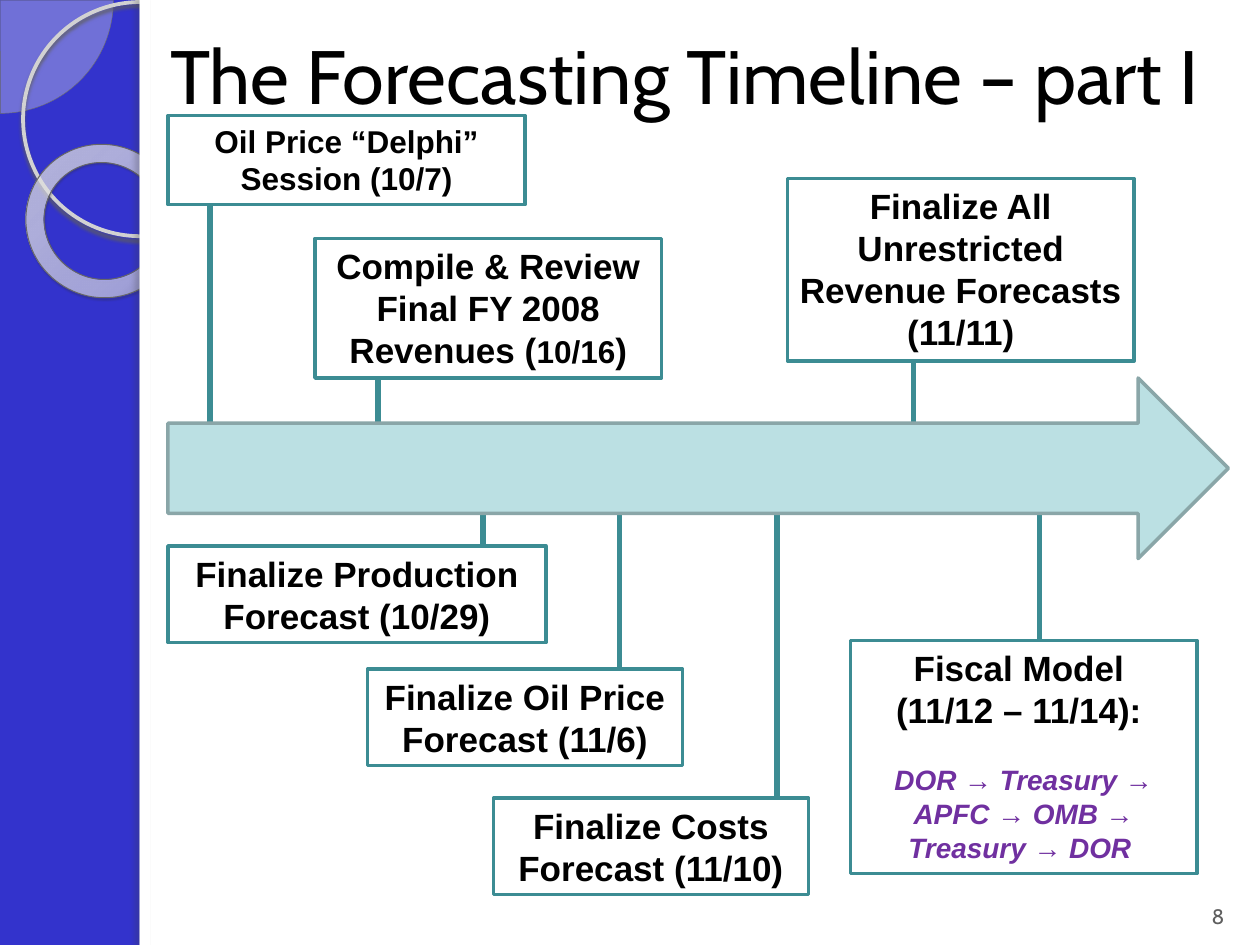
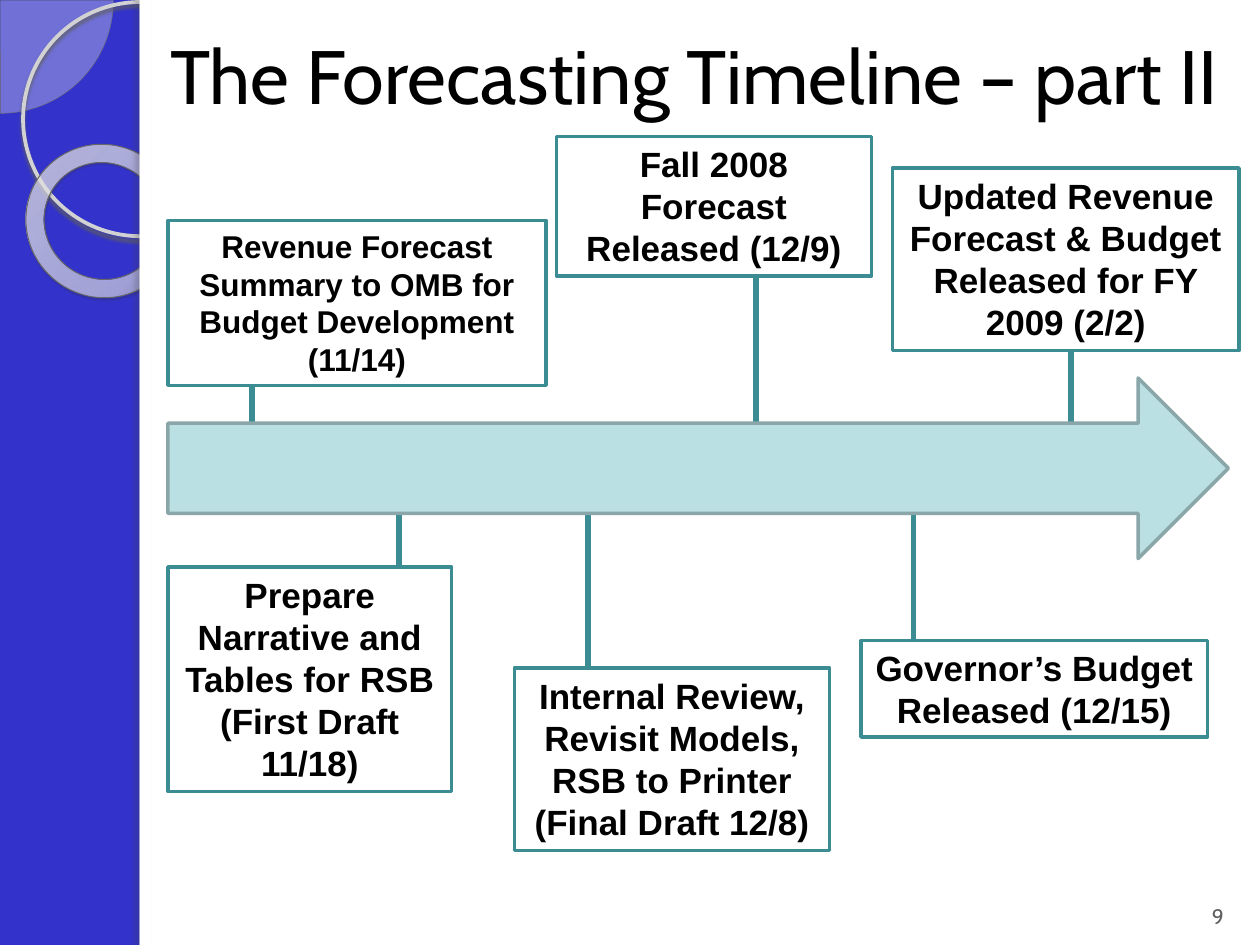
from dataclasses import dataclass
from typing import Any, Optional

import pptx
import pptx.dml.color
import pptx.enum.shapes
import pptx.enum.text
import pptx.oxml
import pptx.oxml.ns
import pptx.util

PX = 7620
ANGLE = 60000
SHAPES = pptx.enum.shapes.MSO_SHAPE
ALIGN = pptx.enum.text.PP_ALIGN
ANCHOR = pptx.enum.text.MSO_ANCHOR
AUTO = pptx.enum.text.MSO_AUTO_SIZE

BLUE, WHITE, BLACK = "3333CC", "FFFFFF", "000000"
TEAL, PALE_TEAL, GREY_TEAL = "3C8C93", "BBE0E3", "8AA6A8"
PURPLE, GREY = "7030A0", "5F5F5F"

ARROW_MIDDLE = 450
TITLE_FONT = {"name": "Cabin", "size": pptx.util.Pt(43.2), "bold": False}
NUMBER_FONT = {"name": "Cabin", "size": pptx.util.Pt(12)}
LABEL_FONT = {"name": "Arial", "bold": True}
TITLE_FRAME = {"word_wrap": True, "auto_size": AUTO.NONE,
               "vertical_anchor": ANCHOR.MIDDLE, "margin_right": 0}
NUMBER_FRAME = {"word_wrap": True, "vertical_anchor": ANCHOR.BOTTOM}
LABEL_FRAME = {"word_wrap": True, "vertical_anchor": ANCHOR.TOP,
               "auto_size": AUTO.SHAPE_TO_FIT_TEXT}


@dataclass(frozen=True)
class Area:
    left: int
    top: int
    width: int
    height: int

    def emu(self) -> list[int]:
        return [side * PX for side in (self.left, self.top, self.width, self.height)]


@dataclass(frozen=True)
class Shadow:
    color: str
    alpha: int
    blur: float
    distance: float
    angle: int


@dataclass(frozen=True)
class Span:
    text: str
    size: int = 20
    color: str = BLACK
    italic: bool = False


@dataclass(frozen=True)
class Event:
    area: Area
    stem_x: int
    stem_end: int
    paras: list[list[Span]]
    stem_start: int = ARROW_MIDDLE


@dataclass(frozen=True)
class Timeline:
    title: str
    number: int
    events: list[Event]


def label(text: str, size: int = 20) -> list[list[Span]]:
    return [[Span(text, size)]]


TIMELINES = [
    Timeline("The Forecasting Timeline – part I", 8, [
        Event(Area(160, 110, 340, 85), 200, 190,
              label("Oil Price “Delphi” Session (10/7)", 18)),
        Event(Area(300, 227, 330, 133), 360, 310,
              [[Span("Compile & Review Final FY 2008 Revenues ("),
                Span("10/16", 18), Span(")")]]),
        Event(Area(350, 637, 300, 92), 590, 670,
              label("Finalize Oil Price Forecast (11/6)")),
        Event(Area(160, 520, 360, 92), 460, 610,
              label("Finalize Production Forecast (10/29)"), 430),
        Event(Area(470, 760, 300, 92), 740, 770,
              label("Finalize Costs Forecast (11/10)")),
        Event(Area(750, 170, 330, 174), 870, 200,
              label("Finalize All Unrestricted Revenue Forecasts (11/11)")),
        Event(Area(810, 610, 330, 222), 990, 770,
              [[Span("Fiscal Model \n(11/12 – 11/14): ")],
               [Span("DOR → Treasury → APFC → OMB → Treasury → DOR ",
                     16, PURPLE, True)]]),
    ]),
    Timeline("The Forecasting Timeline – part II", 9, [
        Event(Area(160, 210, 360, 157), 240, 220,
              label("Revenue Forecast Summary to OMB for Budget Development (11/14)", 18),
              480),
        Event(Area(160, 540, 270, 214), 380, 580,
              label("Prepare Narrative and Tables for RSB (First Draft 11/18)"), 440),
        Event(Area(490, 636, 300, 174), 560, 650,
              label("Internal Review, Revisit Models, RSB to Printer (Final Draft 12/8)"),
              470),
        Event(Area(530, 130, 300, 133), 720, 200,
              label("Fall 2008 Forecast Released (12/9)")),
        Event(Area(820, 610, 330, 92), 870, 700,
              label("Governor’s Budget Released (12/15)")),
        Event(Area(850, 160, 330, 174), 1020, 200,
              label("Updated Revenue Forecast & Budget Released for FY 2009 (2/2)")),
    ]),
]


def rgb(color: str) -> pptx.dml.color.RGBColor:
    return pptx.dml.color.RGBColor.from_string(color)


def apply(target: Any, values: dict[str, Any]) -> None:
    for name, value in values.items():
        setattr(target, name, value)


def drawing_xml(tag: str, attributes: str, content: str) -> Any:
    space = pptx.oxml.ns.nsdecls("a")
    return pptx.oxml.parse_xml(f"<a:{tag} {space} {attributes}>{content}</a:{tag}>")


def color_xml(color: str, alpha: int) -> str:
    return f'<a:srgbClr val="{color}"><a:alpha val="{alpha * 1000}"/></a:srgbClr>'


def replace_fill(shape: Any, fill: Any) -> None:
    shape.fill.background()
    properties = shape.element.spPr
    properties.replace(properties.find(pptx.oxml.ns.qn("a:noFill")), fill)


def add_shadow(shape: Any, shadow: Shadow) -> None:
    effects = shape.element.spPr.find(pptx.oxml.ns.qn("a:effectLst"))
    effects.append(drawing_xml(
        "outerShdw",
        f'blurRad="{int(shadow.blur * 12700)}" dist="{int(shadow.distance * 12700)}" '
        f'dir="{shadow.angle * ANGLE}" algn="tl" rotWithShape="0"',
        color_xml(shadow.color, shadow.alpha)))


def add_box(page: Any, kind: Any, area: Area, fill: Optional[str] = None,
            line: Optional[str] = None, weight: float = 2,
            shadow: Optional[Shadow] = None) -> Any:
    box = page.shapes.add_shape(kind, *area.emu())
    box.shadow.inherit = False
    if fill:
        box.fill.solid()
        box.fill.fore_color.rgb = rgb(fill)
    else:
        box.fill.background()
    if line:
        box.line.color.rgb = rgb(line)
        box.line.width = pptx.util.Pt(weight)
    else:
        box.line.fill.background()
    if shadow:
        add_shadow(box, shadow)
    return box


def add_decoration(page: Any, layout: Any) -> None:
    pie = add_box(page, SHAPES.PIE, Area(-107, -107, 215, 215), line="6E6E6E", weight=0.25)
    pie.adjustments[0] = 0
    pie.adjustments[1] = 54.02
    replace_fill(pie, drawing_xml("solidFill", "", color_xml("EEEEEE", 33)))

    ring = add_box(page, SHAPES.OVAL, Area(22, 2, 223, 223), line="D2D2D2", weight=2.15,
                   shadow=Shadow(GREY, 85, 2, 2, 90))

    donut = add_box(page, SHAPES.DONUT, Area(24, 138, 148, 145), line="676767", weight=0.58,
                    shadow=Shadow("2F2F2F", 35, 1, 1.2, 75))
    donut.adjustments[0] = 0.12
    donut.rotation = 38.6
    stops = "".join(
        f'<a:gs pos="{place * 1000}">{color_xml(color, alpha)}</a:gs>'
        for place, color, alpha in [(0, "F5F5F5", 70), (70, "FAFAFA", 55), (100, "717171", 60)])
    replace_fill(donut, drawing_xml(
        "gradFill", 'rotWithShape="1"',
        f'<a:gsLst>{stops}</a:gsLst><a:path path="circle">'
        '<a:fillToRect l="-408000" t="-50000" r="508000" b="150000"/></a:path>'))

    panel = add_box(page, SHAPES.RECTANGLE, Area(133, 0, 1067, 900), WHITE)
    edge = add_box(page, SHAPES.RECTANGLE, Area(133, 0, 10, 900), WHITE,
                   shadow=Shadow("404040", 25, 3, 3, 180))

    for number, shape in enumerate([pie, ring, donut, panel, edge], 100):
        shape.element.nvSpPr.cNvPr.set("id", str(number))
        layout.shapes.element.append(shape.element)


def add_span(para: Any, text: str, values: dict[str, Any], color: str) -> None:
    for index, line in enumerate(text.split("\n")):
        if index:
            para.add_line_break()
        span = para.add_run()
        span.text = line
        apply(span.font, values)
        span.font.color.rgb = rgb(color)


def add_title(page: Any, text: str) -> None:
    title = page.shapes.title
    apply(title, dict(zip(("left", "top", "width", "height"), Area(150, 29, 1022, 84).emu())))
    apply(title.text_frame, TITLE_FRAME)
    para = title.text_frame.paragraphs[0]
    para.alignment = ALIGN.LEFT
    add_span(para, text, TITLE_FONT, BLACK)


def add_number(page: Any, number: int) -> None:
    box = page.shapes.add_textbox(*Area(1130, 828, 60, 62).emu())
    apply(box.text_frame, NUMBER_FRAME)
    para = box.text_frame.paragraphs[0]
    para.alignment = ALIGN.CENTER
    add_span(para, str(number), NUMBER_FONT, GREY)


def add_stem(page: Any, event: Event) -> None:
    x = event.stem_x * PX
    stem = page.shapes.add_connector(
        pptx.enum.shapes.MSO_CONNECTOR.STRAIGHT,
        x, event.stem_start * PX, x, event.stem_end * PX)
    stem.line.color.rgb = rgb(TEAL)
    stem.line.width = pptx.util.Pt(3)
    stem.element.spPr.append(drawing_xml("effectLst", "", ""))


def add_event(page: Any, event: Event) -> None:
    box = add_box(page, SHAPES.RECTANGLE, event.area, WHITE, TEAL)
    frame = box.text_frame
    apply(frame, LABEL_FRAME)
    for index, spans in enumerate(event.paras):
        para = frame.add_paragraph() if index else frame.paragraphs[0]
        para.alignment = ALIGN.CENTER
        if index:
            para.space_before = pptx.util.Pt(18.4)
        for span in spans:
            values = {**LABEL_FONT, "size": pptx.util.Pt(span.size), "italic": span.italic}
            add_span(para, span.text, values, span.color)


def add_timeline(deck: Any, layout: Any, timeline: Timeline) -> None:
    page = deck.slides.add_slide(layout)
    if timeline is TIMELINES[0]:
        add_decoration(page, layout)
    for event in timeline.events:
        add_stem(page, event)
    add_number(page, timeline.number)
    add_title(page, timeline.title)
    add_box(page, SHAPES.RIGHT_ARROW, Area(160, 360, 1010, 172), PALE_TEAL, GREY_TEAL)
    for event in timeline.events:
        add_event(page, event)


def main() -> None:
    deck = pptx.Presentation()
    apply(deck, {"slide_width": 1200 * PX, "slide_height": 900 * PX})
    layout = deck.slide_layouts[5]
    background = deck.slide_master.background.fill
    background.solid()
    background.fore_color.rgb = rgb(BLUE)
    for timeline in TIMELINES:
        add_timeline(deck, layout, timeline)
    deck.save("out.pptx")


if __name__ == "__main__":
    main()
